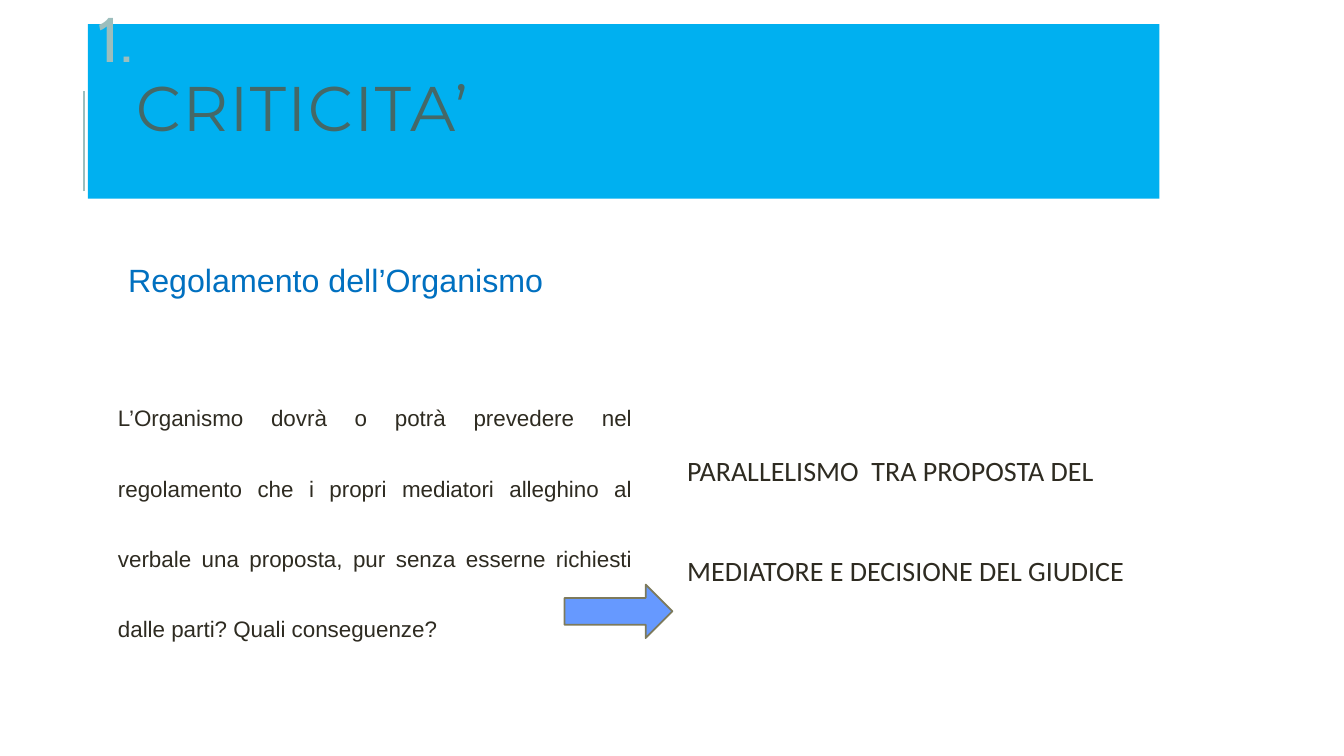
from dataclasses import dataclass

from lxml.etree import SubElement as Sub
from pptx import Presentation
from pptx.dml.color import RGBColor as Rgb
from pptx.enum.shapes import MSO_CONNECTOR as Link, MSO_SHAPE as Kind
from pptx.enum.text import MSO_ANCHOR as Anchor, PP_ALIGN as Align
from pptx.oxml.ns import qn
from pptx.util import Inches, Pt

WIDE, HIGH = Inches(13.33), Inches(7.5)


@dataclass(frozen=True)
class Theme:
    band: str = "00B0F0"
    title: str = "456867"
    mark: str = "9CBEBD"
    lead: str = "0070C0"
    body: str = "2E2B21"
    arrow: str = "6699FF"
    edge: str = "7D7A5C"
    big: float = 45
    head: float = 23
    note: float = 20
    text: float = 16


LOOK = Theme()


def share(x, y, w, h):
    """Turn percentages of the slide into lengths."""
    return [round(side * part / 100)
            for side, part in zip((WIDE, HIGH, WIDE, HIGH), (x, y, w, h))]


def apply(item, values):
    for name, value in values.items():
        setattr(item, name, value)


def pad(frame, left, top, right, low):
    names = ("margin_left", "margin_top", "margin_right", "margin_bottom")
    apply(frame, dict(zip(names, map(Inches, (left, top, right, low)))))


def paint(shape, fill, edge=None):
    shape.shadow.inherit = False
    shape.fill.solid()
    shape.fill.fore_color.rgb = Rgb.from_string(fill)
    if edge:
        shape.line.color.rgb = Rgb.from_string(edge)
        shape.line.width = Pt(1.25)
    else:
        shape.line.fill.background()


def write(para, words, face, size, tint, **form):
    run = para.add_run()
    run.text = words
    apply(run.font, {"name": face, "size": Pt(size)})
    run.font.color.rgb = Rgb.from_string(tint)
    apply(para, form)
    return run


def number(para):
    """Number the paragraph and set its words on the line below."""
    prop = para._p.get_or_add_pPr()
    apply_xml(prop, marL=Inches(.38), indent=-Inches(.38))
    tint = Sub(prop, qn("a:buClr"))
    apply_xml(Sub(tint, qn("a:srgbClr")), val=LOOK.mark)
    apply_xml(Sub(prop, qn("a:buFont")), typeface="Cabin")
    apply_xml(Sub(prop, qn("a:buAutoNum")), type="arabicPeriod")
    para.add_line_break()
    mark = Sub(para._p.find(qn("a:br")), qn("a:rPr"))
    apply_xml(mark, sz=LOOK.big * 100, spc=100)
    apply_xml(Sub(mark, qn("a:latin")), typeface="Cabin")


def apply_xml(node, **values):
    for name, value in values.items():
        node.set(name, str(value))


def banner(slide, box):
    band = slide.shapes.add_shape(Kind.RECTANGLE, *box)
    paint(band, LOOK.band)
    frame = band.text_frame
    apply(frame, {"word_wrap": True, "vertical_anchor": Anchor.MIDDLE})
    pad(frame, .1, .05, .1, .74)
    para = frame.paragraphs[0]
    apply(para, {"alignment": Align.LEFT, "line_spacing": .9,
                 "space_before": Pt(12), "space_after": Pt(8)})
    number(para)
    run = write(para, "CRITICITA’", "Montserrat", LOOK.big, LOOK.title)
    apply_xml(run._r.get_or_add_rPr(), spc=100)


def rule(slide, box):
    x, y, w, h = box
    line = slide.shapes.add_connector(Link.STRAIGHT, x, y + h, x + w, y)
    line.line.color.rgb = Rgb.from_string(LOOK.mark)
    line.line.width = Pt(1.5)
    Sub(line._element.spPr, qn("a:effectLst"))


def block(slide, box, inset, anchor, *words, **form):
    frame = slide.shapes.add_textbox(*box).text_frame
    apply(frame, {"word_wrap": True, "vertical_anchor": anchor})
    pad(frame, *inset)
    write(frame.paragraphs[0], *words, **form)


def arrow(slide, box):
    paint(slide.shapes.add_shape(Kind.RIGHT_ARROW, *box),
          LOOK.arrow, LOOK.edge)


def main():
    deck = Presentation()
    apply(deck, {"slide_width": WIDE, "slide_height": HIGH})
    slide = deck.slides.add_slide(deck.slide_layouts[6])
    rule(slide, share(6.23, 12, 0, 13.33))
    banner(slide, share(6.53, 3.2, 79.74, 23.07))
    block(slide, share(8.4, 31.33, 39, 12), (.15, .05, .15, .05),
          Anchor.MIDDLE, "Regolamento dell’Organismo",
          "Arial", LOOK.head, LOOK.lead, line_spacing=.9)
    block(slide, share(8.4, 43.33, 39, 48.67), (.05, .33, .05, .05),
          Anchor.TOP,
          "L’Organismo dovrà o potrà prevedere nel regolamento che i propri "
          "mediatori alleghino al verbale una proposta, pur senza esserne "
          "richiesti dalle parti? Quali conseguenze?",
          "Arial", LOOK.text, LOOK.body,
          line_spacing=2.62, alignment=Align.JUSTIFY)
    block(slide, share(50, 43.33, 39, 53.47), (.15, .6, .05, .05),
          Anchor.TOP,
          "PARALLELISMO  TRA PROPOSTA DEL MEDIATORE E DECISIONE DEL GIUDICE",
          "Calibri", LOOK.note, LOOK.body, line_spacing=2.96)
    arrow(slide, share(42, 77.33, 8.03, 7.07))
    deck.save("out.pptx")


if __name__ == "__main__":
    main()
